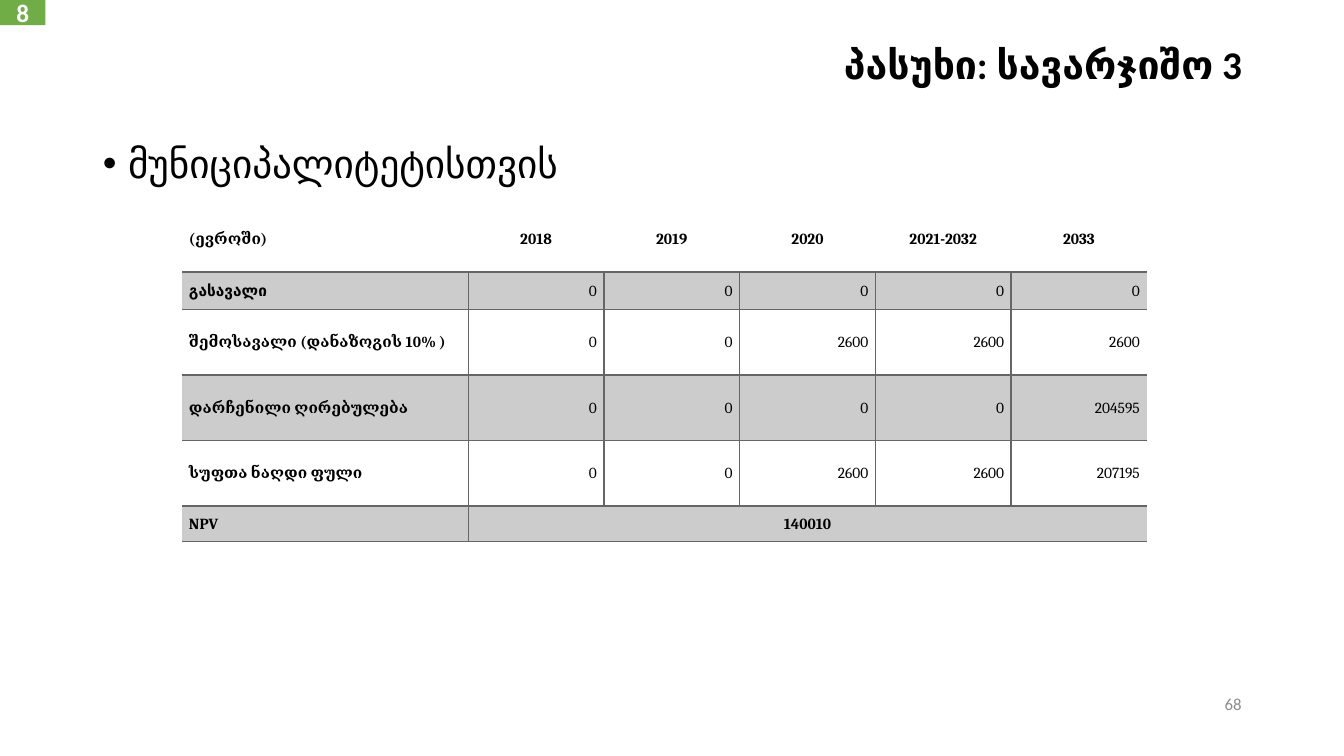
from lxml import etree
from pptx import Presentation
from pptx.dml.color import RGBColor
from pptx.enum.shapes import MSO_SHAPE
from pptx.enum.text import MSO_ANCHOR, MSO_AUTO_SIZE, PP_ALIGN
from pptx.oxml.ns import qn
from pptx.util import Inches, Pt

RECT = MSO_SHAPE.RECTANGLE
TOP, MIDDLE = MSO_ANCHOR.TOP, MSO_ANCHOR.MIDDLE
NO_FIT = MSO_AUTO_SIZE.NONE
LEFT, CENTER, RIGHT = PP_ALIGN.LEFT, PP_ALIGN.CENTER, PP_ALIGN.RIGHT

BLACK = RGBColor(0x00, 0x00, 0x00)
WHITE = RGBColor(0xFF, 0xFF, 0xFF)
GREEN = RGBColor(0x70, 0xAD, 0x47)
BAND = RGBColor(0xCC, 0xCC, 0xCC)
RULE = RGBColor(0x66, 0x66, 0x66)
MUTED = RGBColor(0x8C, 0x8C, 0x8C)

CASH_FLOW = [
    ["(ევროში)", "2018", "2019", "2020", "2021-2032", "2033"],
    ["გასავალი", "0", "0", "0", "0", "0"],
    ["შემოსავალი (დანაზოგის 10% )", "0", "0", "2600", "2600", "2600"],
    ["დარჩენილი ღირებულება", "0", "0", "0", "0", "204595"],
    ["სუფთა ნაღდი ფული", "0", "0", "2600", "2600", "207195"],
    ["NPV", "140010"],
]
COL_WIDTHS = [21.3] + [10.1] * 5
ROW_HEIGHTS = [8.93, 4.93, 8.67, 8.67, 8.67, 4.67]


class Deck:
    """Slide with its style; lengths are percentages of the slide's width and height."""

    def __init__(self):
        self.prs = Presentation()
        self.prs.slide_width, self.prs.slide_height = Inches(13.33), Inches(7.5)
        self.s = self.prs.slides.add_slide(self.prs.slide_layouts[1])
        self.font, self.table_font = "Calibri", "Cambria"

    def x(self, share):
        return round(self.prs.slide_width * share / 100)

    def y(self, share):
        return round(self.prs.slide_height * share / 100)

    def box(self, left, top, width, height):
        return self.x(left), self.y(top), self.x(width), self.y(height)

    def add_text(self, tf, text, size, color, align, bold=False, font=None, spacing=None):
        p = tf.paragraphs[0]
        p.alignment = align
        if spacing:
            p.line_spacing = spacing
        r = p.add_run()
        r.text = text
        r.font.name = font or self.font
        r.font.size, r.font.bold = Pt(size), bold
        r.font.color.rgb = color
        return p

    def placeholder(self, sp, box, text, align, bold=False):
        sp.left, sp.top, sp.width, sp.height = self.box(*box)
        tf = sp.text_frame
        tf.word_wrap, tf.auto_size, tf.vertical_anchor = True, NO_FIT, TOP
        p = self.add_text(tf, text, 28, BLACK, align, bold, spacing=0.9)
        p.space_before = Pt(0)
        return p

    def title(self, box, text):
        self.placeholder(self.s.shapes.title, box, text, RIGHT, True)

    def bullet(self, box, text):
        pPr = self.placeholder(self.s.placeholders[1], box, text, LEFT)._p.get_or_add_pPr()
        pPr.set("marL", str(Inches(0.25)))
        pPr.set("indent", str(-Inches(0.25)))
        etree.SubElement(pPr, qn("a:buFont")).set("typeface", "Arial")
        etree.SubElement(pPr, qn("a:buChar")).set("char", "•")

    def label(self, box, text):
        tf = self.s.shapes.add_textbox(*self.box(*box)).text_frame
        tf.word_wrap, tf.vertical_anchor = True, MIDDLE
        self.add_text(tf, text, 12, MUTED, RIGHT)

    def tag(self, box, text):
        sp = self.s.shapes.add_shape(RECT, *self.box(*box))
        sp.shadow.inherit = False
        sp.fill.solid()
        sp.fill.fore_color.rgb = GREEN
        sp.line.fill.background()
        sp.text_frame.vertical_anchor = MIDDLE
        self.add_text(sp.text_frame, text, 18, WHITE, CENTER, True)

    def borders(self, cell, **widths):
        tcPr = cell._tc.get_or_add_tcPr()
        for side, width in widths.items():
            ln = etree.SubElement(tcPr, qn("a:ln" + side))
            if width:
                ln.set("w", str(Pt(width)))
                fill = etree.SubElement(ln, qn("a:solidFill"))
                etree.SubElement(fill, qn("a:srgbClr")).set("val", str(RULE))
            else:
                etree.SubElement(ln, qn("a:noFill"))

    def table(self, left, top, rows, widths, heights):
        box = self.box(left, top, sum(widths), sum(heights))
        table = self.s.shapes.add_table(len(heights), len(widths), *box).table
        table.first_row = table.horz_banding = False
        for col, width in zip(table.columns, widths):
            col.width = self.x(width)
        for row, height in zip(table.rows, heights):
            row.height = self.y(height)
        last_row, last_col = len(heights) - 1, len(widths) - 1
        for i, values in enumerate(rows):
            merged = len(values) <= last_col
            if merged:
                table.cell(i, 1).merge(table.cell(i, last_col))
            for j in range(len(widths)):
                cell = table.cell(i, j)
                self.borders(
                    cell,
                    L=1 if i and j and not cell.is_spanned else 0,
                    R=1 if i and j < last_col and not (merged and j) else 0,
                    T=(0, 1.5)[i] if i < 2 else 1,
                    B=1 if i else 1.5,
                )
                cell.fill.solid()
                cell.fill.fore_color.rgb = BAND if i % 2 else WHITE
                cell.margin_left = cell.margin_right = Inches(0.07)
                cell.margin_top = cell.margin_bottom = 0
                cell.vertical_anchor = MIDDLE
                if j < len(values):
                    bold = j == 0 or i in (0, last_row)
                    align = LEFT if j == 0 else CENTER if bold else RIGHT
                    font = self.font if (i, j) == (1, 0) else self.table_font
                    self.add_text(cell.text_frame, values[j], 11, BLACK, align, bold, font, 1.07)


def main():
    deck = Deck()
    deck.label((70.63, 90.4, 22.5, 5.33), "68")
    deck.title((6.9, 5.33, 86.25, 7.6), "პასუხი: სავარჯიშო 3")
    deck.bullet((6.9, 18.4, 86.25, 8.27), "მუნიციპალიტეტისთვის")
    deck.tag((0, 0, 3.38, 3.33), "8")
    deck.table(13.54, 27.07, CASH_FLOW, COL_WIDTHS, ROW_HEIGHTS)
    deck.prs.save("out.pptx")


if __name__ == "__main__":
    main()
